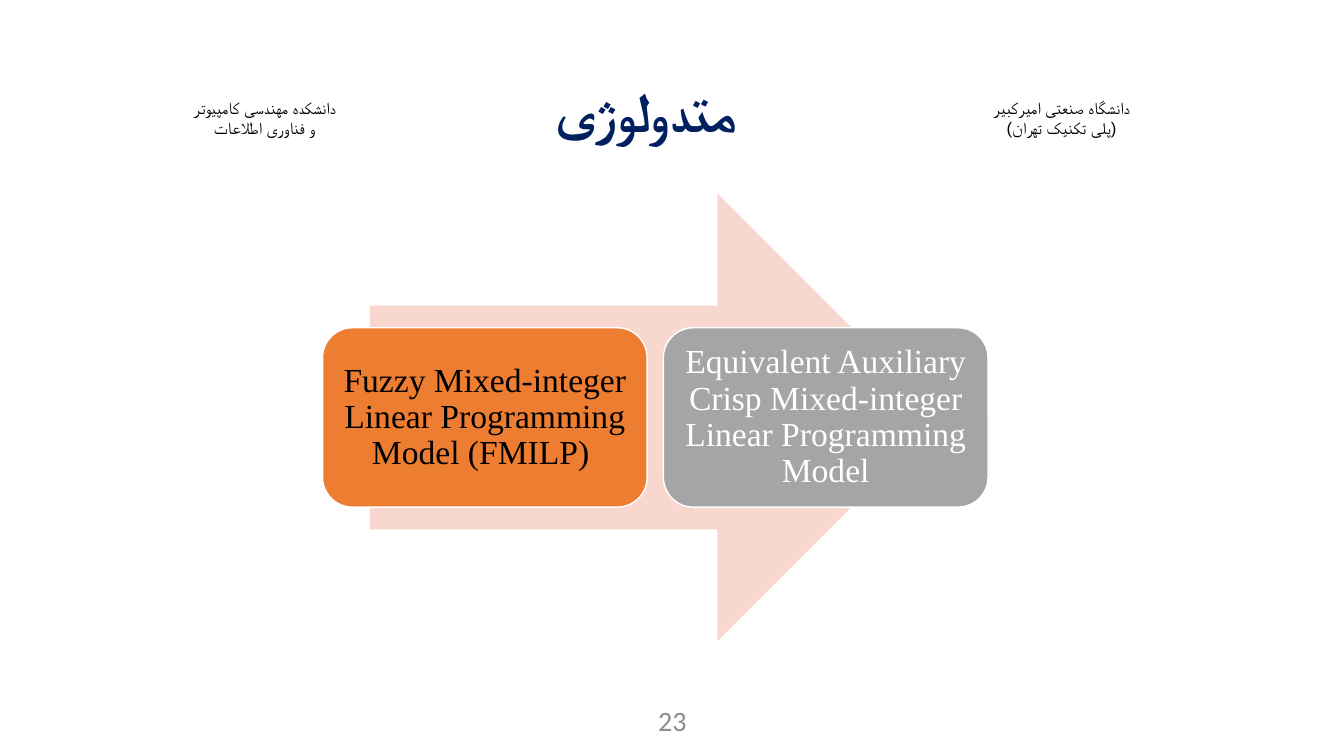
from dataclasses import dataclass

from lxml.etree import SubElement
from pptx import Presentation
from pptx.dml.color import RGBColor as Rgb
from pptx.enum.shapes import MSO_SHAPE as Shape
from pptx.enum.text import MSO_ANCHOR as Anchor, PP_ALIGN as Align
from pptx.oxml import parse_xml
from pptx.oxml.ns import nsdecls, qn
from pptx.util import Cm, Pt


@dataclass(frozen=True)
class Theme:
    """Colours, fonts and type sizes of the slide."""
    white: str = "FFFFFF"
    black: str = "000000"
    navy: str = "002060"
    sky: str = "00B0F0"
    page_grey: str = "8C8C8C"
    blush: str = "F8D7CE"
    orange: str = "ED7D31"
    grey: str = "A5A5A5"
    title_font: str = "Cambria"
    label_font: str = "Arial"
    page_font: str = "Calibri"
    model_font: str = "Times New Roman"
    title_size: int = 40
    model_size: int = 24
    page_size: int = 20
    label_size: int = 12


THEME = Theme()
MODELS = (
    ("Fuzzy Mixed-integer Linear Programming Model (FMILP) ", THEME.orange, THEME.black),
    ("Equivalent Auxiliary Crisp Mixed-integer Linear Programming Model", THEME.grey, THEME.white),
)
AFFILIATIONS = (
    (24.71, 4.09, ("دانشگاه صنعتی امیرکبیر", "(پلی تکنیک تهران)")),
    (4.45, 4.45, ("دانشکده مهندسی کامپیوتر", "و فناوری اطلاعات")),
)


def apply(target, formats):
    """Set every attribute named in formats on target."""
    for name, value in formats.items():
        setattr(target, name, value)


def write(frame, lines, font, size, color, bold=False, **paragraph_formats):
    """Fill a text frame with one centred paragraph per line and return the runs."""
    runs = []
    for index, line in enumerate(lines):
        paragraph = frame.paragraphs[0] if index == 0 else frame.add_paragraph()
        apply(paragraph, {"alignment": Align.CENTER, **paragraph_formats})
        run = paragraph.add_run()
        run.text = line
        apply(run.font, {"name": font, "size": Pt(size), "bold": bold})
        run.font.color.rgb = Rgb.from_string(color)
        SubElement(run.font._element, qn("a:cs"), typeface=font)
        runs.append(run)
    return runs


def add_text(slide, box, lines, font, size, color, anchor=Anchor.MIDDLE, bold=False):
    """Add a wrapping text box and return its runs."""
    frame = slide.shapes.add_textbox(*map(Cm, box)).text_frame
    apply(frame, {"word_wrap": True, "vertical_anchor": anchor})
    return write(frame, lines, font, size, color, bold)


def add_block(slide, kind, box, fill):
    """Add a flat filled shape without an outline."""
    block = slide.shapes.add_shape(kind, *map(Cm, box))
    block.shadow.inherit = False
    block.fill.solid()
    block.fill.fore_color.rgb = Rgb.from_string(fill)
    block.line.fill.background()
    return block


def add_model(slide, box, text, fill, color):
    """Add a rounded model box with a white edge and its text."""
    model = add_block(slide, Shape.ROUNDED_RECTANGLE, box, fill)
    model.line.color.rgb = Rgb.from_string(THEME.white)
    model.line.width = Pt(1)
    inset = Cm(0.25)
    apply(model.text_frame, {
        "word_wrap": True, "vertical_anchor": Anchor.MIDDLE,
        "margin_left": inset, "margin_right": inset,
        "margin_top": inset, "margin_bottom": inset,
    })
    write(model.text_frame, [text], THEME.model_font, THEME.model_size, color,
          line_spacing=0.9, space_after=Pt(8.4))


def add_title(slide):
    """Add the outlined slide title."""
    run, = add_text(slide, (5.92, 1.19, 20.75, 3.18), ["متدولوژی"],
                    THEME.title_font, THEME.title_size, THEME.navy, bold=True)
    run.font._element.insert(0, parse_xml(
        f'<a:ln {nsdecls("a")} w="{Pt(1)}"><a:solidFill>'
        f'<a:srgbClr val="{THEME.sky}"/></a:solidFill></a:ln>'))


def add_page_number(slide):
    """Add the right-to-left page number."""
    run, = add_text(slide, (11.23, 17.65, 11.43, 1.02), ["23"],
                    THEME.page_font, THEME.page_size, THEME.page_grey)
    run._r.getparent().get_or_add_pPr().set("rtl", "1")


def main():
    """Build the methodology slide and save it."""
    deck = Presentation()
    apply(deck, {"slide_width": Cm(33.87), "slide_height": Cm(19.05)})
    slide = deck.slides.add_slide(deck.slide_layouts[6])
    add_page_number(slide)
    add_title(slide)
    for left, width, lines in AFFILIATIONS:
        add_text(slide, (left, 2.34, width, 1.3), lines, THEME.label_font,
                 THEME.label_size, THEME.black, Anchor.TOP)
    add_block(slide, Shape.RIGHT_ARROW, (9.32, 4.88, 14.4, 11.28), THEME.blush)
    for index, (text, fill, color) in enumerate(MODELS):
        add_model(slide, (8.13 + index * 8.59, 8.26, 8.18, 4.52), text, fill, color)
    deck.save("out.pptx")


if __name__ == "__main__":
    main()
